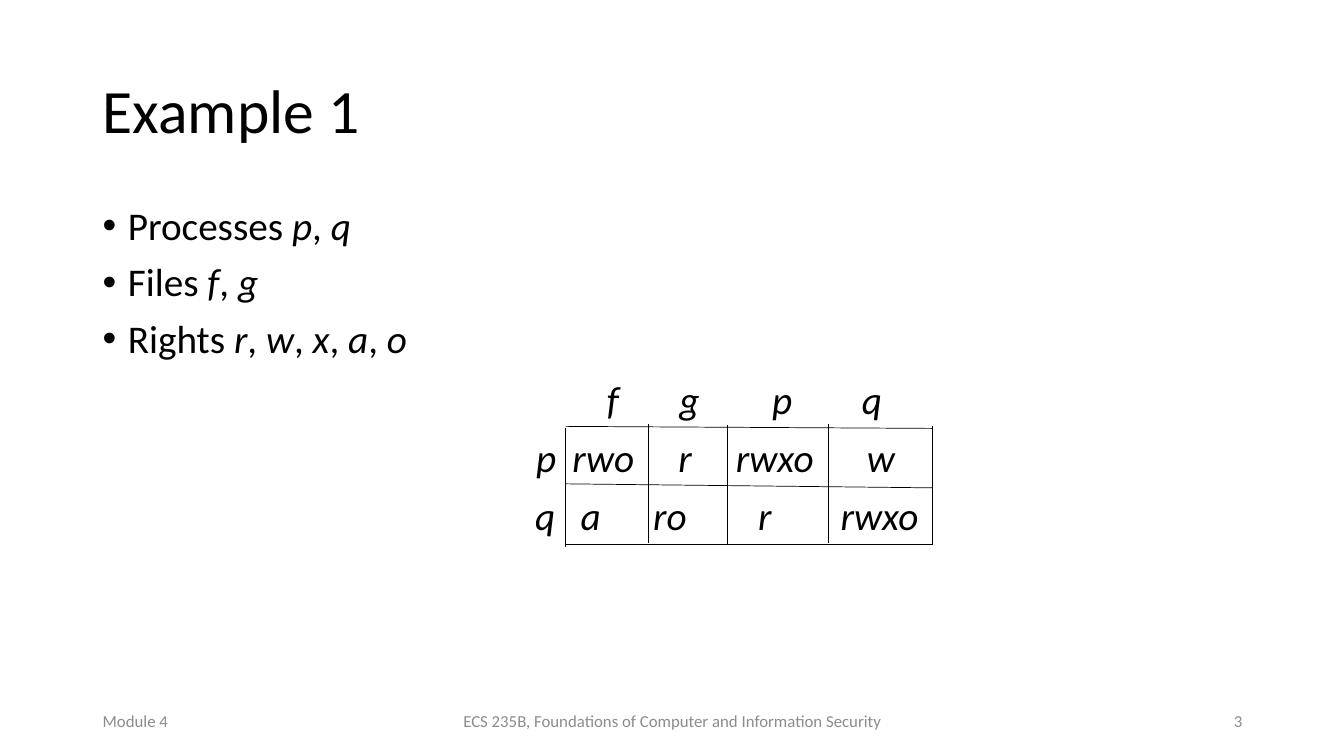
from lxml import etree
from pptx import Presentation
from pptx import util as u
from pptx.dml.color import RGBColor
from pptx.enum import shapes, text
from pptx.oxml.ns import qn

COLOURS = {"ink": "000000", "footer": "8C8C8C"}
LEFT, CENTRE, RIGHT = text.PP_ALIGN.LEFT, text.PP_ALIGN.CENTER, text.PP_ALIGN.RIGHT
TOP, MIDDLE = text.MSO_ANCHOR.TOP, text.MSO_ANCHOR.MIDDLE


class SlideBuilder:
    font = "Calibri"
    rule_width = 0.5

    def __init__(self, page):
        self.page = page

    def text(self, lines, left, top, width, height, size=28, colour="ink", align=LEFT,
             anchor=TOP, spacing=None, before=0, bullet=False, italic=False, tabs=()):
        """Add a text box; asterisks in a line switch italics on and off."""
        box = self.page.shapes.add_textbox(*map(u.Inches, (left, top, width, height)))
        frame = box.text_frame
        frame.word_wrap = True
        frame.vertical_anchor = anchor
        for index, line in enumerate(lines):
            para = frame.add_paragraph() if index else frame.paragraphs[0]
            para.alignment = align
            para.line_spacing = spacing
            para.space_before = u.Pt(before)
            if bullet:
                self.bullet(para)
            if tabs:
                self.tab_stops(para, tabs)
            for part, words in enumerate(line.split("*")):
                if words:
                    span = para.add_run()
                    span.text = words
                    span.font.name = self.font
                    span.font.size = u.Pt(size)
                    span.font.italic = italic or part % 2 == 1
                    span.font.color.rgb = RGBColor.from_string(COLOURS[colour])

    def bullet(self, para, indent=0.25):
        props = para._p.get_or_add_pPr()
        props.set("marL", str(u.Inches(indent)))
        props.set("indent", str(-u.Inches(indent)))
        etree.SubElement(props, qn("a:buFont")).set("typeface", "Arial")
        etree.SubElement(props, qn("a:buChar")).set("char", "•")

    def tab_stops(self, para, positions):
        stops = etree.SubElement(para._p.get_or_add_pPr(), qn("a:tabLst"))
        for position in positions:
            stop = etree.SubElement(stops, qn("a:tab"))
            stop.set("pos", str(u.Inches(position)))
            stop.set("algn", "l")

    def line(self, x1, y1, x2, y2):
        rule = self.page.shapes.add_connector(
            shapes.MSO_CONNECTOR.STRAIGHT, *map(u.Inches, (x1, y1, x2, y2)))
        rule.line.color.rgb = RGBColor.from_string(COLOURS["ink"])
        rule.line.width = u.Pt(self.rule_width)
        etree.SubElement(rule._element.spPr, qn("a:effectLst"))


def main():
    deck = Presentation()
    deck.slide_width, deck.slide_height = u.Inches(13.33), u.Inches(7.5)
    slide = SlideBuilder(deck.slides.add_slide(deck.slide_layouts[6]))

    slide.text(["Example 1"], 0.92, 0.4, 11.5, 1.45, size=44, anchor=MIDDLE, spacing=0.9)
    slide.text(["Processes *p*, *q*", "Files *f*, *g*", "Rights *r*, *w*, *x*, *a*, *o*"],
               0.92, 2, 11.5, 4.76, spacing=0.9, before=10, bullet=True)

    matrix_rows = [
        (5.92, 3.67, 3.19, ["f", "g", "p", "q"], (0.72, 1.64, 2.53)),
        (5.22, 4.25, 3.9, ["p", "rwo", "r", "rwxo", "w"], (0.36, 1.41, 1.98, 3.28)),
        (5.21, 4.83, 4.21, ["q", "a", "ro", "r", "rwxo"], (0.45, 1.17, 2.21, 3.03)),
    ]
    for left, top, width, entries, tabs in matrix_rows:
        slide.text(["\t".join(entries)], left, top, width, 0.57, italic=True, tabs=tabs)

    matrix_left, matrix_right, rule_height = 5.61, 9.25, 1.18
    for start, end in [(4.23, 4.25), (4.8, 4.84), (5.4, 5.4)]:
        slide.line(matrix_left, start, matrix_right, end)
    for x, top in [(matrix_left, 4.25), (6.43, 4.21), (7.21, 4.22), (8.22, 4.21),
                   (matrix_right, 4.23)]:
        slide.line(x, top, x, top + rule_height)

    footers = [
        ("Module 4", 0.92, 3, LEFT),
        ("ECS 235B, Foundations of Computer and Information Security", 4.42, 4.5, CENTRE),
        ("3", 9.42, 3, RIGHT),
    ]
    for words, left, width, align in footers:
        slide.text([words], left, 6.95, width, 0.4, size=12, colour="footer",
                   align=align, anchor=MIDDLE)

    deck.save("out.pptx")


if __name__ == "__main__":
    main()
